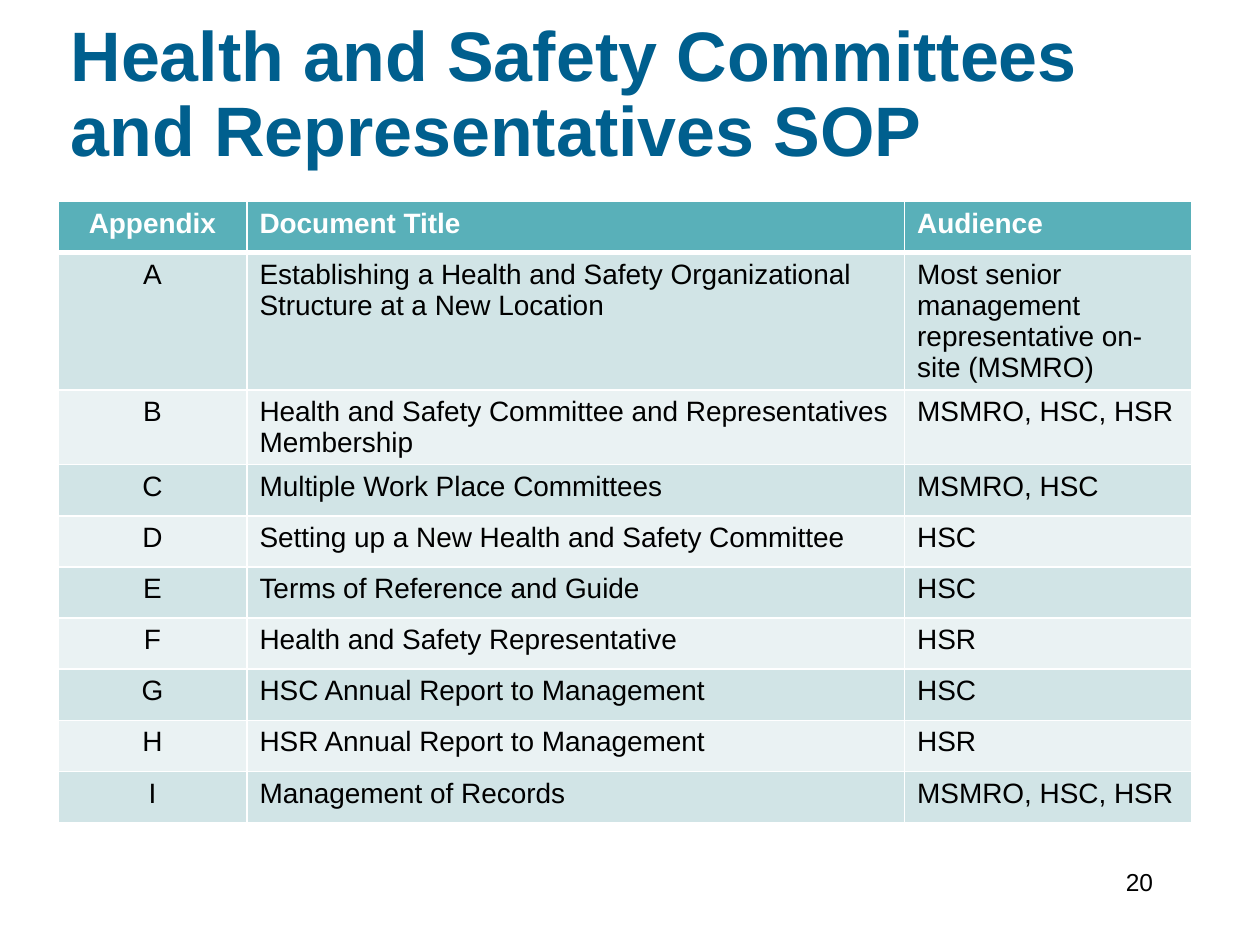
from lxml import etree
from pptx import Presentation
from pptx.dml.color import RGBColor
from pptx.enum.text import MSO_ANCHOR, PP_ALIGN
from pptx.oxml.ns import qn
from pptx.util import Inches, Pt

LEFT, CENTER, RIGHT = PP_ALIGN.LEFT, PP_ALIGN.CENTER, PP_ALIGN.RIGHT
TOP, MIDDLE = MSO_ANCHOR.TOP, MSO_ANCHOR.MIDDLE

WHITE, BLACK, BLUE, TEAL = "FFFFFF", "000000", "005F8E", "59B0B9"
BANDS = ("D1E4E6", "EAF2F3")
COLUMN_WIDTHS = (1.5, 5.22, 2.28)
ROWS = (
    ("Appendix", "Document Title", "Audience"),
    ("A", "Establishing a Health and Safety Organizational Structure at a New Location",
     "Most senior management representative on-site (MSMRO)"),
    ("B", "Health and Safety Committee and Representatives Membership", "MSMRO, HSC, HSR"),
    ("C", "Multiple Work Place Committees", "MSMRO, HSC"),
    ("D", "Setting up a New Health and Safety Committee", "HSC"),
    ("E", "Terms of Reference and Guide", "HSC"),
    ("F", "Health and Safety Representative", "HSR"),
    ("G", "HSC Annual Report to Management", "HSC"),
    ("H", "HSR Annual Report to Management", "HSR"),
    ("I", "Management of Records", "MSMRO, HSC, HSR"),
)


def color(value):
    return RGBColor.from_string(value)


class SlideBuilder:
    font_name = "Arial"

    def __init__(self, page):
        self.page = page

    def fill_text(self, frame, text, size, tint, bold=False, **paragraph_format):
        frame.word_wrap = True
        para = frame.paragraphs[0]
        for name, value in paragraph_format.items():
            setattr(para, name, value)
        span = para.add_run()
        span.text = text
        span.font.color.rgb = color(tint)
        font_format = {"name": self.font_name, "size": Pt(size), "bold": bold}
        for name, value in font_format.items():
            setattr(span.font, name, value)

    def title(self, text, left, top, width, height):
        box = self.page.shapes.title
        place = {"left": left, "top": top, "width": width, "height": height}
        for name, value in place.items():
            setattr(box, name, Inches(value))
        box.text_frame.vertical_anchor = MIDDLE
        self.fill_text(box.text_frame, text, 40, BLUE, True, alignment=LEFT, line_spacing=0.9)

    def page_number(self, text, left, top, width, height):
        box = self.page.shapes.add_textbox(*map(Inches, (left, top, width, height)))
        box.text_frame.vertical_anchor = TOP
        self.fill_text(box.text_frame, text, 14, BLACK, alignment=RIGHT)

    def borders(self, cell, widths):
        properties = cell._tc.get_or_add_tcPr()
        for side, width in widths.items():
            line = etree.SubElement(properties, qn(f"a:ln{side}"), w=str(Pt(width)))
            fill = etree.SubElement(line, qn("a:solidFill"))
            etree.SubElement(fill, qn("a:srgbClr"), val=WHITE)

    def table(self, rows, widths, left, top, height):
        area = map(Inches, (left, top, sum(widths), height))
        table = self.page.shapes.add_table(len(rows), len(widths), *area).table
        for column, width in zip(table.columns, widths):
            column.width = Inches(width)
        for row_index, row in enumerate(rows):
            header = row_index == 0
            fill = TEAL if header else BANDS[(row_index - 1) % 2]
            sides = {"L": 1, "R": 1, "T": 3 if row_index == 1 else 1, "B": 3 if header else 1}
            for column_index, text in enumerate(row):
                cell = table.cell(row_index, column_index)
                self.borders(cell, sides)
                cell.fill.solid()
                cell.fill.fore_color.rgb = color(fill)
                self.fill_text(cell.text_frame, text, 16, WHITE if header else BLACK, header,
                               alignment=LEFT if column_index else CENTER)


def main():
    deck = Presentation()
    deck.slide_width, deck.slide_height = Inches(10), Inches(7.5)
    builder = SlideBuilder(deck.slides.add_slide(deck.slide_layouts[5]))
    builder.title("Health and Safety Committees and Representatives SOP", 0.46, 0.14, 9, 1.25)
    builder.table(ROWS, COLUMN_WIDTHS, 0.46, 1.6, 4.06)
    builder.page_number("20", 7.17, 6.83, 2.08, 0.5)
    deck.save("out.pptx")


if __name__ == "__main__":
    main()
